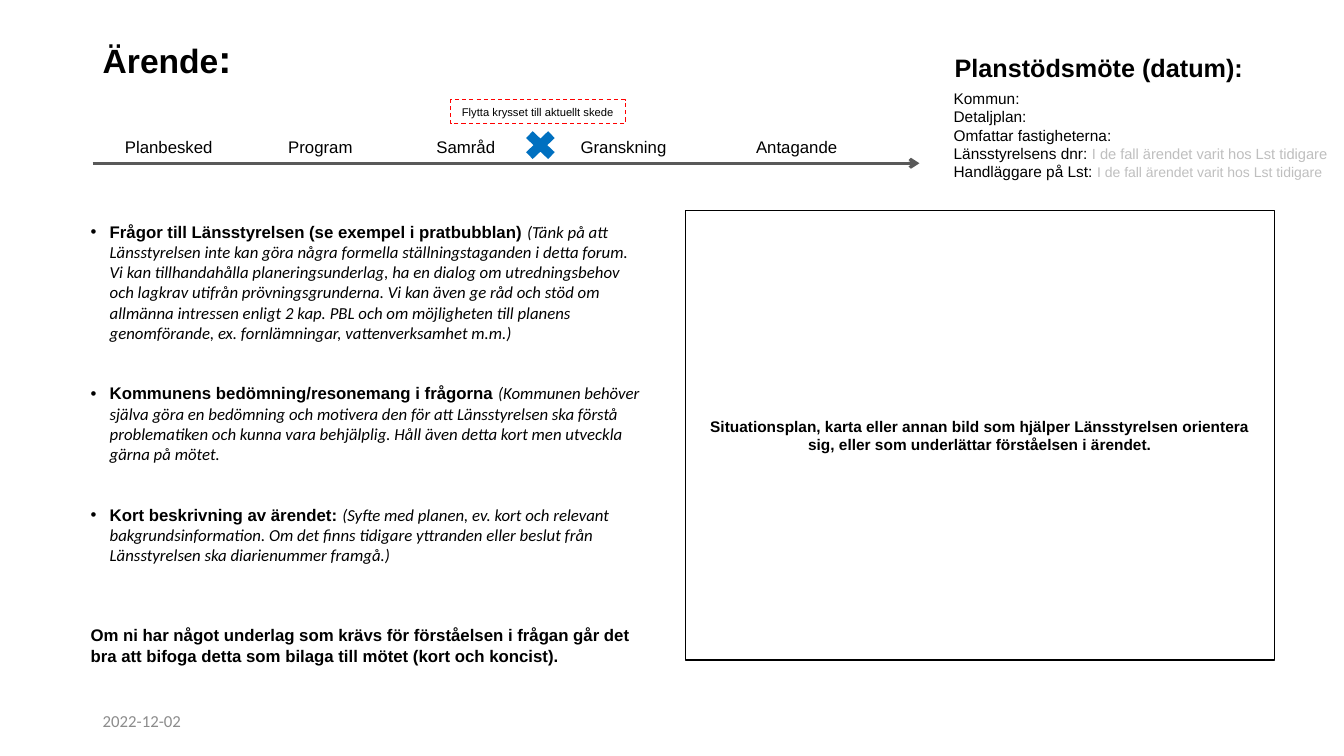
from lxml import etree
from pptx import Presentation
from pptx.dml.color import RGBColor
from pptx.enum.dml import MSO_LINE
from pptx.enum.shapes import MSO_CONNECTOR, MSO_SHAPE
from pptx.enum.text import MSO_ANCHOR, PP_ALIGN
from pptx.oxml.ns import qn
from pptx.util import Inches, Pt

TOP, MIDDLE = MSO_ANCHOR.TOP, MSO_ANCHOR.MIDDLE
LEFT, CENTER = PP_ALIGN.LEFT, PP_ALIGN.CENTER
COLORS = {
    "text": "000000",
    "hint": "BFBFBF",
    "date": "8C8C8C",
    "timeline": "595959",
    "cross": "0070C0",
    "note": "FF0000",
}

presentation = Presentation()
presentation.slide_width = Inches(13.33)
presentation.slide_height = Inches(7.5)
slide = presentation.slides.add_slide(presentation.slide_layouts[6])
shapes = slide.shapes


def add_run(paragraph, text, size, bold=False, italic=False, font="Arial", color="text"):
    run = paragraph.add_run()
    run.text = text
    run.font.name = font
    run.font.size = Pt(size)
    run.font.bold = bold
    run.font.italic = italic
    run.font.color.rgb = RGBColor.from_string(COLORS[color])


def add_box(left, top, width, height, anchor=TOP, align=LEFT, border=None, weight=1):
    """Add a text box, or a bordered rectangle, and return it with its first paragraph."""
    place = [Inches(length) for length in (left, top, width, height)]
    if border:
        shape = shapes.add_shape(MSO_SHAPE.RECTANGLE, *place)
        shape.shadow.inherit = False
        shape.fill.background()
        shape.line.color.rgb = RGBColor.from_string(COLORS[border])
        shape.line.width = Pt(weight)
    else:
        shape = shapes.add_textbox(*place)
    shape.text_frame.word_wrap = True
    shape.text_frame.vertical_anchor = anchor
    paragraph = shape.text_frame.paragraphs[0]
    paragraph.alignment = align
    return shape, paragraph


# Headings
_, title = add_box(0.92, 0.34, 8.2, 0.97)
title.line_spacing = 0.9
add_run(title, "Ärende", 24, bold=True)
add_run(title, ":", 28, bold=True)

_, meeting = add_box(9.37, 0.5, 3.96, 0.4)
meeting.line_spacing = 0.9
add_run(meeting, "Planstödsmöte (datum):", 18, bold=True)

# Case details
HINT = "I de fall ärendet varit hos Lst tidigare"
details = [
    ("Kommun:", None),
    ("Detaljplan:", None),
    ("Omfattar fastigheterna:", None),
    ("Länsstyrelsens dnr: ", 10.5),
    ("Handläggare på Lst: ", 10),
]
details_box, paragraph = add_box(9.36, 0.83, 3.97, 1.05)
for index, (label, hint_size) in enumerate(details):
    if index:
        paragraph = details_box.text_frame.add_paragraph()
    add_run(paragraph, label, 11)
    if hint_size:
        add_run(paragraph, HINT, hint_size, color="hint")

# Timeline with its stages
timeline = shapes.add_connector(
    MSO_CONNECTOR.STRAIGHT, Inches(0.92), Inches(1.62), Inches(9.12), Inches(1.62))
timeline.line.color.rgb = RGBColor.from_string(COLORS["timeline"])
timeline.line.width = Pt(2.25)
etree.SubElement(timeline.line._get_or_add_ln(), qn("a:tailEnd"), type="arrow")
etree.SubElement(timeline._element.spPr, qn("a:effectLst"))

stages = [
    ("Planbesked", 1.14, 1.61),
    ("Program", 2.76, 1.28),
    ("Samråd", 4.23, 1.28),
    ("Granskning", 5.66, 1.61),
    ("Antagande", 7.4, 1.61),
]
for name, left, width in stages:
    _, paragraph = add_box(left, 1.31, width, 0.3)
    add_run(paragraph, name, 12)

# Cross marking the current stage, and its note
cross = shapes.add_shape(
    MSO_SHAPE.MATH_MULTIPLY, Inches(5.15), Inches(1.24), Inches(0.42), Inches(0.4))
cross.shadow.inherit = False
cross.fill.solid()
cross.fill.fore_color.rgb = RGBColor.from_string(COLORS["cross"])
cross.line.fill.background()

note, paragraph = add_box(4.47, 0.99, 1.73, 0.24, MIDDLE, CENTER, "note", 0.75)
note.line.dash_style = MSO_LINE.DASH
add_run(paragraph, "Flytta krysset till aktuellt skede", 8)

# Questions: heading, guidance, space before in points
questions = [
    ("Frågor till Länsstyrelsen (se exempel i pratbubblan) ",
     "(Tänk på att Länsstyrelsen inte kan göra några formella ställningstaganden i detta "
     "forum. Vi kan tillhandahålla planeringsunderlag, ha en dialog om utredningsbehov och "
     "lagkrav utifrån prövningsgrunderna. Vi kan även ge råd och stöd om allmänna intressen "
     "enligt 2 kap. PBL och om möjligheten till planens genomförande, ex. fornlämningar, "
     "vattenverksamhet m.m.)", 0),
    ("Kommunens bedömning/resonemang i frågorna ",
     "(Kommunen behöver själva göra en bedömning och motivera den för att Länsstyrelsen ska "
     "förstå problematiken och kunna vara behjälplig. Håll även detta kort men utveckla "
     "gärna på mötet.", 29),
    ("Kort beskrivning av ärendet: ",
     "(Syfte med planen, ev. kort och relevant bakgrundsinformation. Om det finns tidigare "
     "yttranden eller beslut från Länsstyrelsen ska diarienummer framgå.)", 29),
]
questions_box, paragraph = add_box(0.8, 2.15, 5.67, 4.6)
for index, (heading, guidance, space) in enumerate(questions):
    if index:
        paragraph = questions_box.text_frame.add_paragraph()
        paragraph.space_before = Pt(space)
    properties = paragraph._p.get_or_add_pPr()
    properties.set("marL", str(Inches(0.19)))
    properties.set("indent", str(-Inches(0.19)))
    etree.SubElement(properties, qn("a:buFont"), typeface="Arial")
    etree.SubElement(properties, qn("a:buChar"), char="•")
    add_run(paragraph, heading, 12, bold=True)
    add_run(paragraph, guidance, 12, italic=True, font="Calibri")

closing = questions_box.text_frame.add_paragraph()
closing.space_before = Pt(43)
add_run(closing, "Om ni har något underlag som krävs för förståelsen i frågan går det bra att "
        "bifoga detta som bilaga till mötet (kort och koncist).", 12, bold=True)

# Frame for the site plan
_, paragraph = add_box(6.8, 2.09, 5.84, 4.46, MIDDLE, CENTER, "text")
add_run(paragraph, "Situationsplan, karta eller annan bild som hjälper Länsstyrelsen orientera "
        "sig, eller som underlättar förståelsen i ärendet.", 11, bold=True)

# Date
_, paragraph = add_box(0.92, 6.95, 3, 0.4, MIDDLE)
add_run(paragraph, "2022-12-02", 12, font="Calibri", color="date")

presentation.save("out.pptx")
